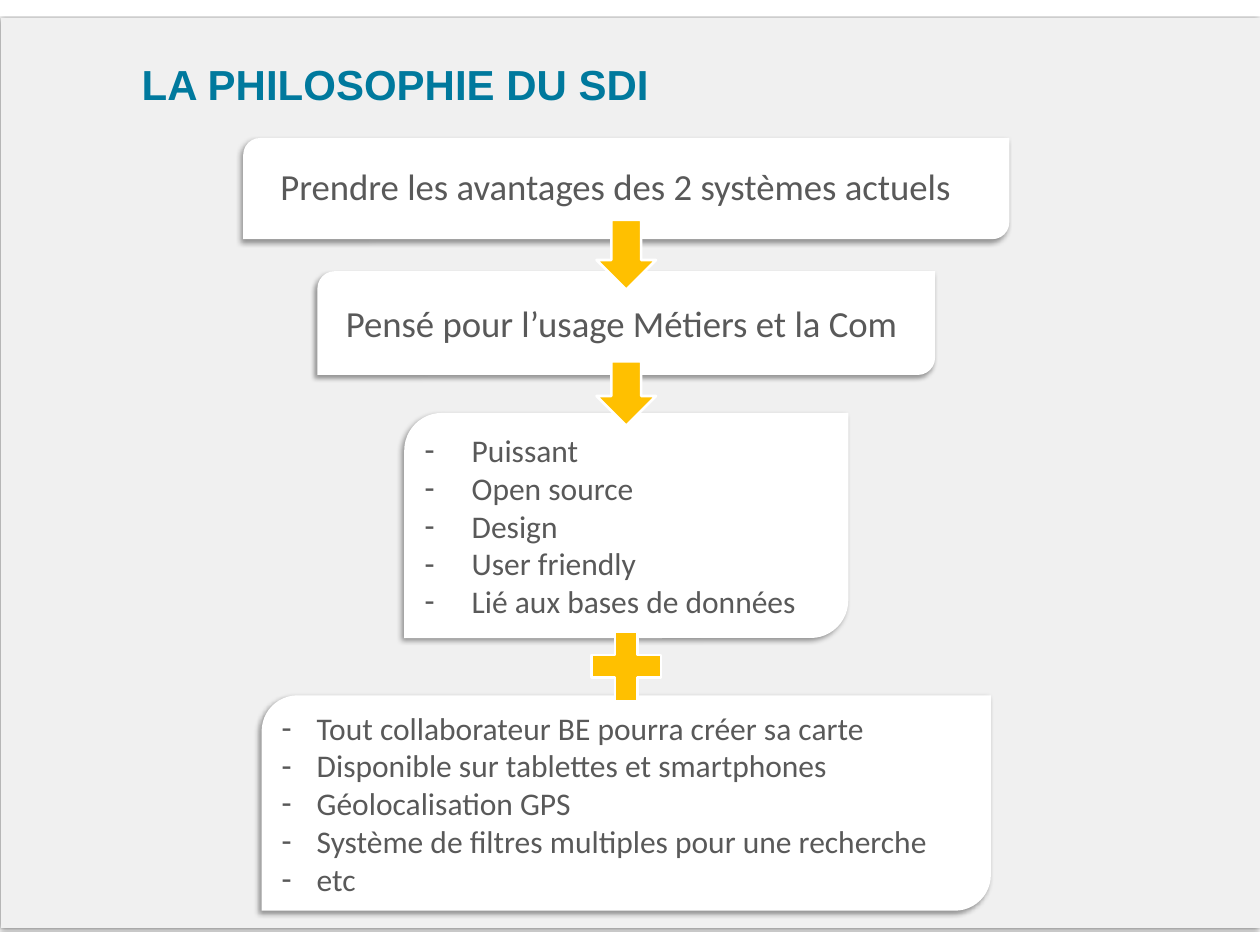
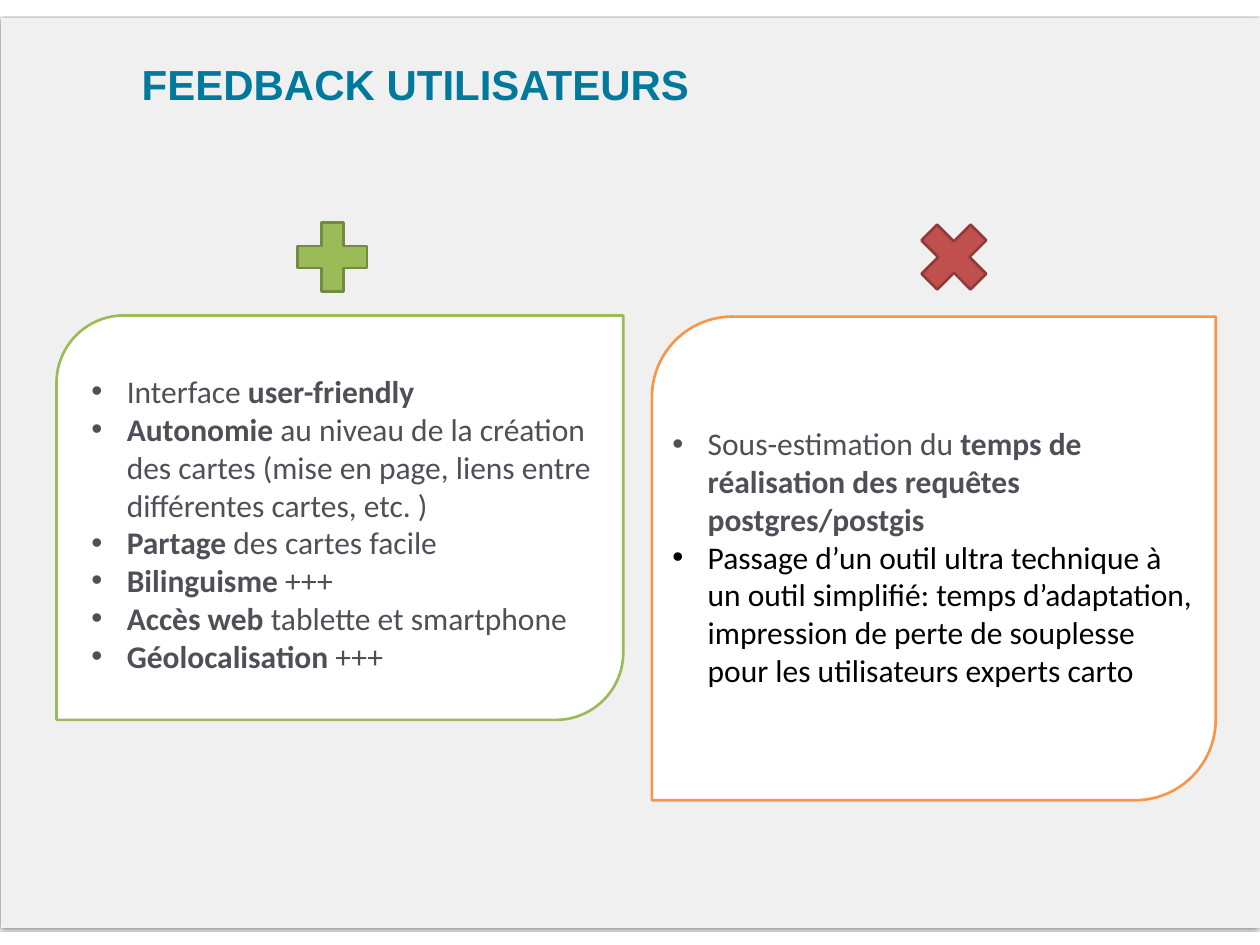
"""Build two slides on the SDI: its philosophy and the feedback of its users."""
from lxml import etree
from pptx import Presentation
from pptx.dml.color import RGBColor
from pptx.enum.shapes import MSO_SHAPE
from pptx.enum.text import MSO_ANCHOR, MSO_AUTO_SIZE, PP_ALIGN
from pptx.oxml import parse_xml
from pptx.oxml.ns import nsdecls, qn
from pptx.util import Cm, Pt

RECTANGLE = MSO_SHAPE.RECTANGLE
CARD = MSO_SHAPE.ROUND_2_DIAG_RECTANGLE
ARROW = MSO_SHAPE.RIGHT_ARROW
PLUS = MSO_SHAPE.MATH_PLUS
CROSS = MSO_SHAPE.MATH_MULTIPLY
LEFT = PP_ALIGN.LEFT
TOP, MIDDLE = MSO_ANCHOR.TOP, MSO_ANCHOR.MIDDLE
NO_FIT, GROW = MSO_AUTO_SIZE.NONE, MSO_AUTO_SIZE.SHAPE_TO_FIT_TEXT

WHITE = RGBColor(0xFF, 0xFF, 0xFF)
BLACK = RGBColor(0x00, 0x00, 0x00)
PALE_GREY = RGBColor(0xF0, 0xF0, 0xF0)
TEAL = RGBColor(0x00, 0x79, 0x9D)
GREY = RGBColor(0x59, 0x59, 0x59)
SLATE = RGBColor(0x4F, 0x50, 0x57)
AMBER = RGBColor(0xFF, 0xC0, 0x00)
GREEN = RGBColor(0x9B, 0xBB, 0x59)
DARK_GREEN = RGBColor(0x73, 0x8A, 0x42)
RED = RGBColor(0xC0, 0x50, 0x4D)
DARK_RED = RGBColor(0x8E, 0x3B, 0x39)
ORANGE = RGBColor(0xF7, 0x96, 0x46)

TITLE_FONT = {"name": "Arial", "size": Pt(32), "bold": True}
STEP_FONT = {"name": "Calibri", "size": Pt(28)}
LIST_FONT = {"name": "Calibri", "size": Pt(24)}
TITLE_FRAME = {"margin_left": 0, "margin_right": 0, "margin_top": 0, "margin_bottom": 0,
               "vertical_anchor": TOP, "word_wrap": True, "auto_size": NO_FIT}
CARD_FRAME = {"vertical_anchor": MIDDLE, "word_wrap": True}
GROWING_FRAME = {"word_wrap": True, "auto_size": GROW}

PANEL_SHADOW = (50, 2, 1, 90)
CARD_SHADOW = (40, 4, 3, 135)
AXIS = 16.84
SYMBOL = 2.54
SYMBOL_TOP = 5.64


def add_block(slide, preset, box, fill, outline=None, shadow=None):
    """Add a filled shape; the shadow is (opacity %, blur pt, distance pt, angle)."""
    block = slide.shapes.add_shape(preset, *map(Cm, box))
    block.shadow.inherit = False
    block.fill.solid()
    block.fill.fore_color.rgb = fill
    if outline:
        block.line.color.rgb = outline
        block.line.width = Pt(2)
    else:
        block.line.fill.background()
    if shadow:
        opacity, blur, distance, angle = shadow
        block.element.spPr.find(qn("a:effectLst")).append(parse_xml(
            f'<a:outerShdw {nsdecls("a")} blurRad="{Pt(blur)}" dist="{Pt(distance)}" '
            f'dir="{angle * 60000}" algn="ctr" rotWithShape="0"><a:srgbClr val="000000">'
            f'<a:alpha val="{opacity * 1000}"/></a:srgbClr></a:outerShdw>'))
    return block


def write(frame, settings, lines, font, bullet=None, indent=0.0):
    """Fill a text frame with (colour, [(text, bold), ...]) paragraphs."""
    for key, value in settings.items():
        setattr(frame, key, value)
    for index, (colour, pieces) in enumerate(lines):
        paragraph = frame.add_paragraph() if index else frame.paragraphs[0]
        paragraph.alignment = LEFT
        properties = paragraph._p.get_or_add_pPr()
        properties.set("marL", str(Cm(indent)))
        if bullet:
            properties.set("indent", str(-Cm(indent)))
            etree.SubElement(properties, qn("a:buFont")).set("typeface", "Arial")
            etree.SubElement(properties, qn("a:buChar")).set("char", bullet)
        for text, bold in pieces:
            run = paragraph.add_run()
            run.text = text
            for key, value in {"bold": bold, **font}.items():
                setattr(run.font, key, value)
            run.font.color.rgb = colour


deck = Presentation()
deck.slide_width, deck.slide_height = Cm(33.88), Cm(25.4)
title_only = deck.slide_layouts[5]
slides = []
for heading, width, height in [("LA PHILOSOPHIE DU SDI", 25.73, 2.13),
                               ("FEEDBACK UTILISATEURS", 30.48, 2.51)]:
    slide = deck.slides.add_slide(title_only)
    title = slide.shapes.title
    title.left, title.top, title.width, title.height = map(Cm, (3.81, 1.57, width, height))
    write(title.text_frame, TITLE_FRAME, [(TEAL, [(heading, True)])], TITLE_FONT)
    slides.append(slide)
philosophy, feedback = slides

panel = add_block(philosophy, RECTANGLE, (0.03, 0.48, 33.86, 24.46), PALE_GREY,
                  shadow=PANEL_SHADOW)
title_only.shapes.element.insert(2, panel.element)

strengths = ["Puissant", "Open source", "Design", "User friendly", "Lié aux bases de données"]
benefits = ["Tout collaborateur BE pourra créer sa carte",
            "Disponible sur tablettes et smartphones", "Géolocalisation GPS",
            "Système de filtres multiples pour une recherche", "etc"]
for top, width, height, texts, font, bullet, indent in [
        (3.71, 20.6, 2.72, [], STEP_FONT, None, 0),
        (7.29, 16.61, 2.79, ["Pensé pour l’usage Métiers et la Com"], STEP_FONT, None, 0.38),
        (11.1, 11.94, 6.05, strengths, LIST_FONT, "-", 1.27),
        (18.69, 19.61, 5.79, benefits, LIST_FONT, "-", 0.95)]:
    step = add_block(philosophy, CARD, (AXIS - width / 2, top, width, height), WHITE,
                     shadow=CARD_SHADOW)
    write(step.text_frame, CARD_FRAME, [(GREY, [(text, False)]) for text in texts],
          font, bullet, indent)

first_step = philosophy.shapes.add_textbox(*map(Cm, (7.29, 4.29, 19.66, 1.45)))
write(first_step.text_frame, GROWING_FRAME,
      [(GREY, [("Prendre les avantages des 2 systèmes actuels", False)])], STEP_FONT)

for preset, top, width, height, rotation in [(ARROW, 6.05, 1.88, 1.6, 90),
                                             (ARROW, 9.78, 1.73, 1.6, 90),
                                             (PLUS, 16.64, SYMBOL, SYMBOL, 0)]:
    link = add_block(philosophy, preset, (AXIS - width / 2, top, width, height), AMBER, WHITE)
    link.rotation = rotation

positives = [
    (SLATE, [("Interface ", False), ("user-friendly", True)]),
    (SLATE, [("Autonomie", True),
             (" au niveau de la création des cartes (mise en page, liens entre "
              "différentes cartes, etc. )", False)]),
    (SLATE, [("Partage", True), (" des cartes facile", False)]),
    (SLATE, [("Bilinguisme", True), (" +++", False)]),
    (SLATE, [("Accès web ", True), ("tablette et smartphone", False)]),
    (SLATE, [("Géolocalisation", True), (" +++", False)])]
negatives = [
    (SLATE, [("Sous-estimation du ", False),
             ("temps de réalisation des requêtes postgres/postgis", True)]),
    (BLACK, [("Passage d’un outil ultra technique à un outil simplifié: temps d’adaptation, "
              "impression de perte de souplesse pour les utilisateurs experts carto", False)])]
for sign, sign_left, fill, edge, card, border, text_box, opinions in [
        (PLUS, 7.67, GREEN, DARK_GREEN, (1.52, 8.48, 15.24, 10.87), GREEN,
         (2.21, 9.88, 14.58, 9.5), positives),
        (CROSS, 24.38, RED, DARK_RED, (17.53, 8.51, 15.16, 13), ORANGE,
         (17.83, 11.28, 14.55, 7.44), negatives)]:
    add_block(feedback, sign, (sign_left, SYMBOL_TOP, SYMBOL, SYMBOL), fill, edge)
    add_block(feedback, CARD, card, WHITE, border)
    opinion_text = feedback.shapes.add_textbox(*map(Cm, text_box))
    write(opinion_text.text_frame, GROWING_FRAME, opinions, LIST_FONT, "•", 0.95)

deck.save("out.pptx")
